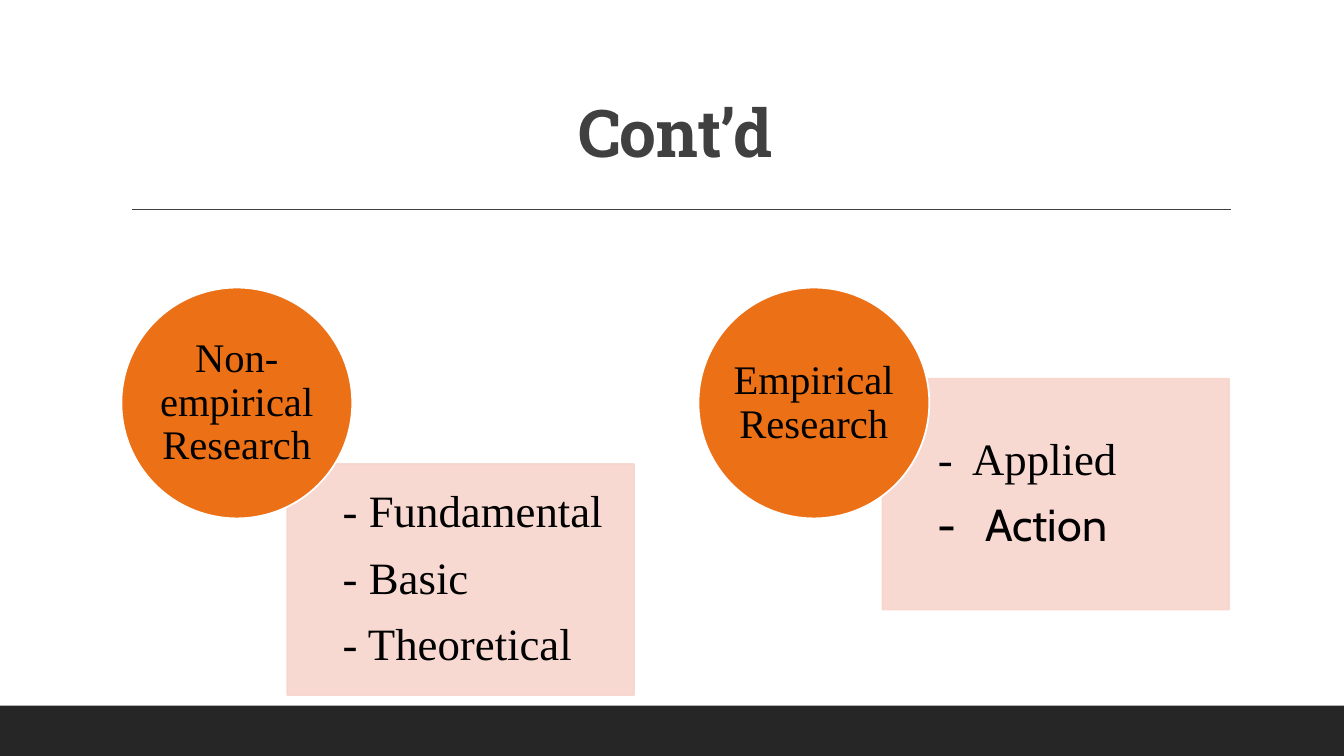
from lxml import etree
from pptx import Presentation
from pptx.dml.color import RGBColor
from pptx.enum.shapes import MSO_CONNECTOR, MSO_SHAPE
from pptx.enum.text import MSO_ANCHOR as Anchor, PP_ALIGN as Align
from pptx.oxml.ns import qn
from pptx.util import Pt

SERIF = "Times New Roman"
CIRCLE_SIZE = 164.88
PANEL_WIDTH, PANEL_HEIGHT = 247.68, 164.88


def set_color(color_format, value):
    color_format.rgb = RGBColor.from_string(value)


def style_text(para, font, size, color="000000"):
    para.line_spacing = 0.9
    for span in para.runs:
        span.font.name = font
        span.font.size = Pt(size)
        set_color(span.font.color, color)


def set_insets(frame, left=0, other=0):
    frame.margin_left = Pt(left)
    frame.margin_top = frame.margin_right = frame.margin_bottom = Pt(other)


def add_tab_stop(para, position):
    stops = etree.SubElement(para._p.get_or_add_pPr(), qn("a:tabLst"))
    etree.SubElement(stops, qn("a:tab"), pos=str(Pt(position)), algn="l")


def add_filled(page, kind, left, top, width, height, fill, line=None, alpha=100):
    shape = page.shapes.add_shape(kind, Pt(left), Pt(top), Pt(width), Pt(height))
    shape.shadow.inherit = False
    shape.fill.solid()
    set_color(shape.fill.fore_color, fill)
    if line:
        shape.line.width = Pt(1.25)
        set_color(shape.line.color, line)
    else:
        shape.line.fill.background()
    if alpha < 100:
        for color in shape._element.spPr.iter(qn("a:srgbClr")):
            etree.SubElement(color, qn("a:alpha"), val=str(alpha * 1000))
    frame = shape.text_frame
    frame.word_wrap = True
    frame.vertical_anchor = Anchor.MIDDLE
    return frame


def add_rule(page, left, right, top):
    rule = page.shapes.add_connector(
        MSO_CONNECTOR.STRAIGHT, Pt(left), Pt(top), Pt(right), Pt(top))
    rule.line.width = Pt(1)
    set_color(rule.line.color, "404040")
    etree.SubElement(rule._element.spPr, qn("a:effectLst"))


def add_title(page, text):
    box = page.shapes.add_textbox(Pt(86.4), Pt(11.5), Pt(792), Pt(114.5))
    frame = box.text_frame
    frame.word_wrap = True
    frame.vertical_anchor = Anchor.BOTTOM
    frame.text = text
    para = frame.paragraphs[0]
    para.alignment = Align.CENTER
    style_text(para, "Roboto Slab", 47, "404040")
    span = para.runs[0]
    span.font.bold = True
    span._r.get_or_add_rPr().set("spc", "-50")


def add_panel(page, left, top, items):
    frame = add_filled(page, MSO_SHAPE.RECTANGLE, left, top, PANEL_WIDTH,
                       PANEL_HEIGHT, "F8D5CC", "F8D5CC", alpha=90)
    set_insets(frame, left=39.6, other=18)
    frame.text = "\n".join(text for text, font, stop in items)
    for para, (text, font, stop) in zip(frame.paragraphs, items):
        para.alignment = Align.LEFT
        para.space_after = Pt(12.9)
        if stop:
            add_tab_stop(para, stop)
        style_text(para, font, 32)


def add_circle(page, left, top, text):
    frame = add_filled(page, MSO_SHAPE.OVAL, left, top, CIRCLE_SIZE,
                       CIRCLE_SIZE, "EC7016", "FFFFFF")
    set_insets(frame)
    frame.text = text
    para = frame.paragraphs[0]
    para.alignment = Align.CENTER
    style_text(para, SERIF, 29)


def main():
    deck = Presentation()
    deck.slide_width, deck.slide_height = Pt(960), Pt(540)
    page = deck.slides.add_slide(deck.slide_layouts[6])

    # Footer band, rule and title
    add_filled(page, MSO_SHAPE.RECTANGLE, 0, 504, 960, 36, "262626")
    add_rule(page, 94.3, 879.1, 149.8)
    add_title(page, "Cont’d")

    # Research types: each circle overlaps its panel of examples
    add_panel(page, 205.2, 331.5, [("- Fundamental", SERIF, None),
                                   ("- Basic", SERIF, None),
                                   ("- Theoretical", SERIF, None)])
    add_circle(page, 86.7, 205.4, "Non-empirical Research")
    add_panel(page, 630.3, 270.5, [("-\tApplied", SERIF, 24.5),
                                   ("-\tAction", "Cabin", 34)])
    add_circle(page, 498.9, 205.4, "Empirical Research")

    deck.save("out.pptx")


if __name__ == "__main__":
    main()
